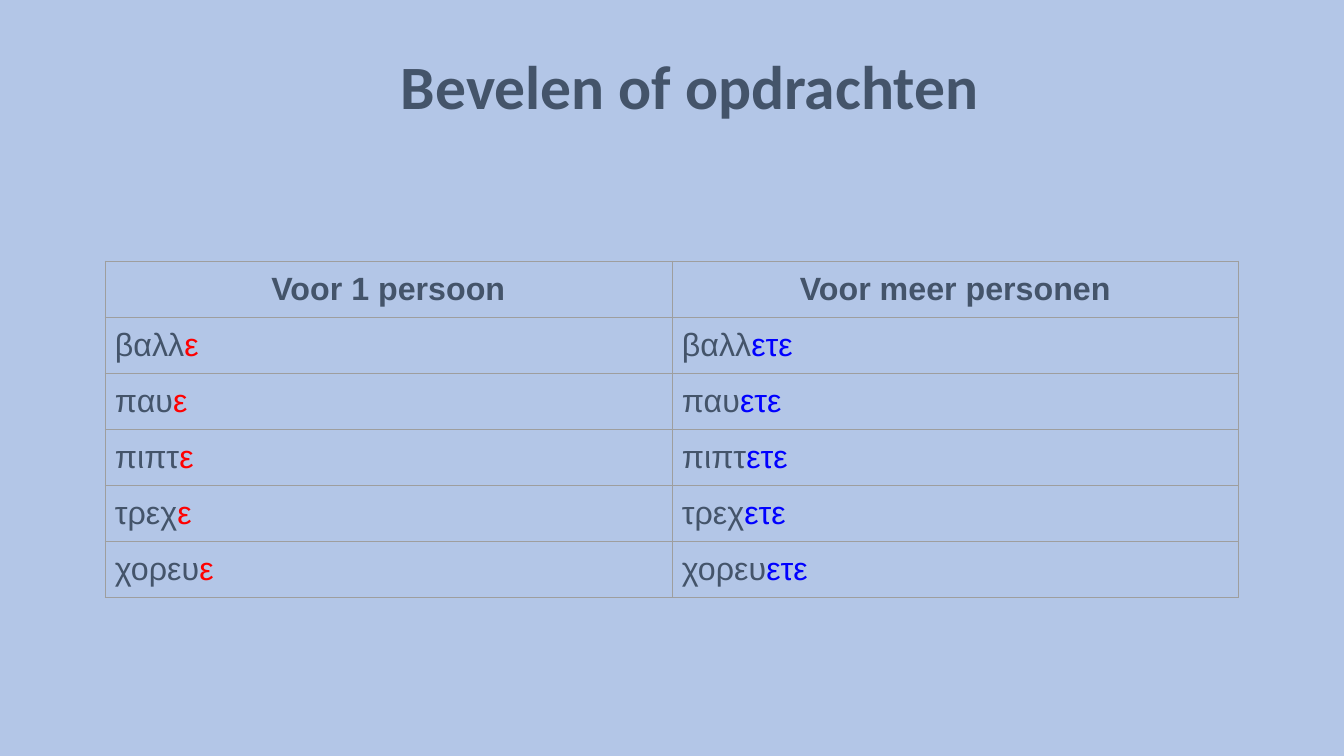
from lxml import etree
from pptx import Presentation
from pptx import util as u
from pptx.dml.color import RGBColor
from pptx.enum import text
from pptx.oxml.ns import qn

TITLE = "Bevelen of opdrachten"
HEADERS = ["Voor 1 persoon", "Voor meer personen"]
STEMS = ["βαλλ", "παυ", "πιπτ", "τρεχ", "χορευ"]
ENDINGS = [("ε", "singular"), ("ετε", "plural")]
COLOURS = {
    "background": "B3C6E7",
    "ink": "44546A",
    "singular": "FF0000",
    "plural": "0000FF",
    "border": "9E9E9E",
}
SLIDE_SIZE = (1344, 756)
TITLE_BOX = (161, 38, 1058, 103)
TABLE_LEFT, TABLE_TOP = 105, 261
COLUMN_WIDTH, ROW_HEIGHT = 567, 56
CELL_MARGIN = 10


def px(length):
    return u.Emu(round(length * 914400 / 100.8))


def colour(name):
    return RGBColor.from_string(COLOURS[name])


def add_span(para, content, *, size, font, name="ink", bold=False):
    span = para.add_run()
    span.text = content
    span.font.size = u.Pt(size)
    span.font.name = font
    span.font.bold = bold
    span.font.color.rgb = colour(name)


def add_borders(cell):
    properties = cell._tc.get_or_add_tcPr()
    for side in ("lnL", "lnR", "lnT", "lnB"):
        line = etree.SubElement(properties, qn(f"a:{side}"), w=str(u.Pt(0.75)))
        fill = etree.SubElement(line, qn("a:solidFill"))
        etree.SubElement(fill, qn("a:srgbClr"), val=COLOURS["border"])


def format_cell(cell):
    cell.margin_left = cell.margin_right = px(CELL_MARGIN)
    cell.margin_top = cell.margin_bottom = px(CELL_MARGIN)
    add_borders(cell)
    cell.fill.background()


def add_title(page):
    title = page.shapes.title
    title.left, title.top, title.width, title.height = map(px, TITLE_BOX)
    title.text_frame.vertical_anchor = text.MSO_ANCHOR.MIDDLE
    para = title.text_frame.paragraphs[0]
    para.alignment = text.PP_ALIGN.CENTER
    para.line_spacing = 0.9
    add_span(para, TITLE, size=44, font="Calibri", bold=True)


def add_verbs(page):
    rows, columns = len(STEMS) + 1, len(HEADERS)
    table = page.shapes.add_table(
        rows, columns, px(TABLE_LEFT), px(TABLE_TOP),
        px(COLUMN_WIDTH * columns), px(ROW_HEIGHT * rows),
    ).table
    table.first_row = table.horz_banding = False
    for cell in table.iter_cells():
        format_cell(cell)
    for column, (header, (ending, name)) in enumerate(zip(HEADERS, ENDINGS)):
        para = table.cell(0, column).text_frame.paragraphs[0]
        para.alignment = text.PP_ALIGN.CENTER
        add_span(para, header, size=23, font="Arial", bold=True)
        for row, stem in enumerate(STEMS, 1):
            para = table.cell(row, column).text_frame.paragraphs[0]
            add_span(para, stem, size=23, font="Arial")
            add_span(para, ending, size=23, font="Arial", name=name)


def main():
    deck = Presentation()
    deck.slide_width, deck.slide_height = map(px, SLIDE_SIZE)
    page = deck.slides.add_slide(deck.slide_layouts[5])
    page.background.fill.solid()
    page.background.fill.fore_color.rgb = colour("background")
    add_title(page)
    add_verbs(page)
    deck.save("out.pptx")


if __name__ == "__main__":
    main()
